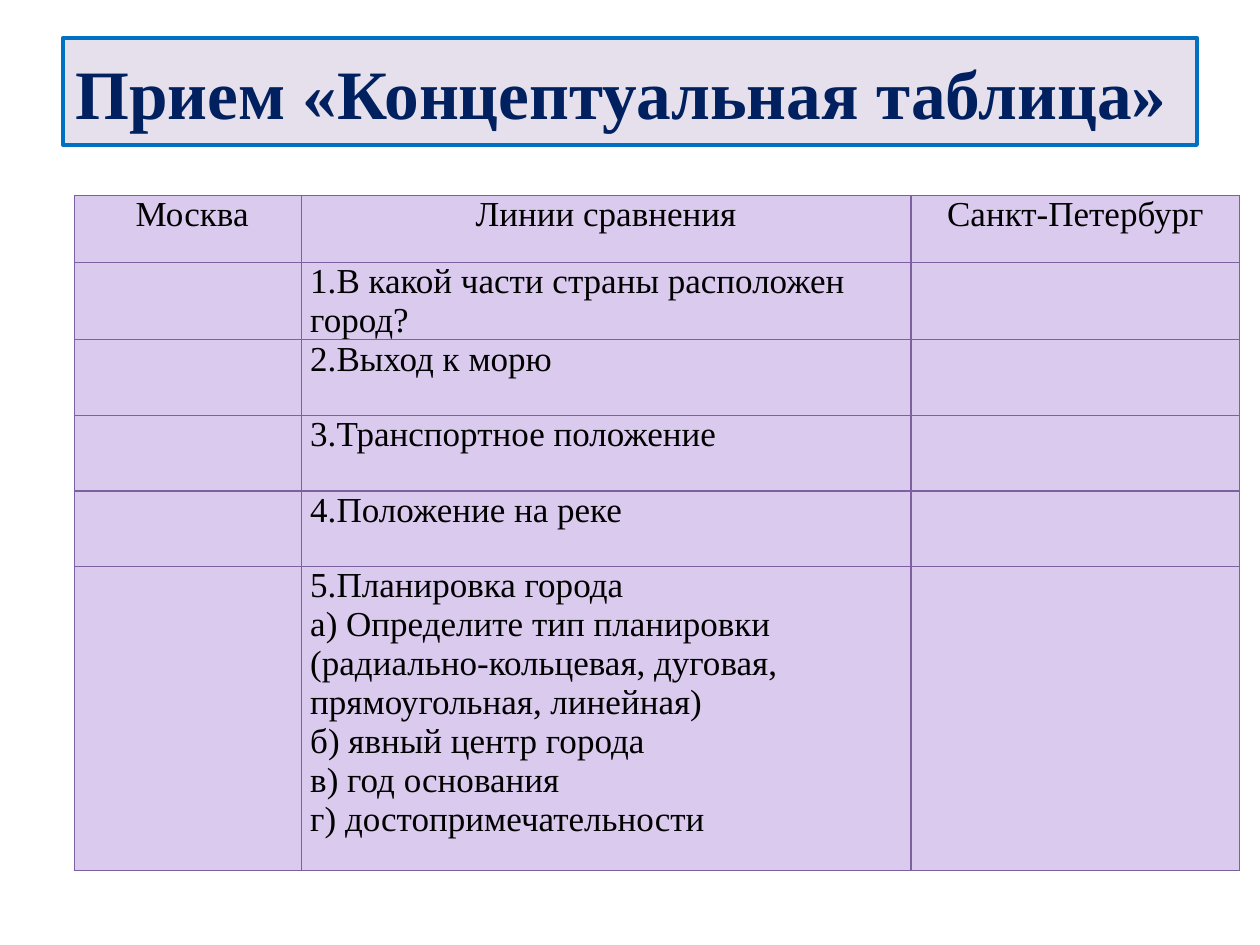
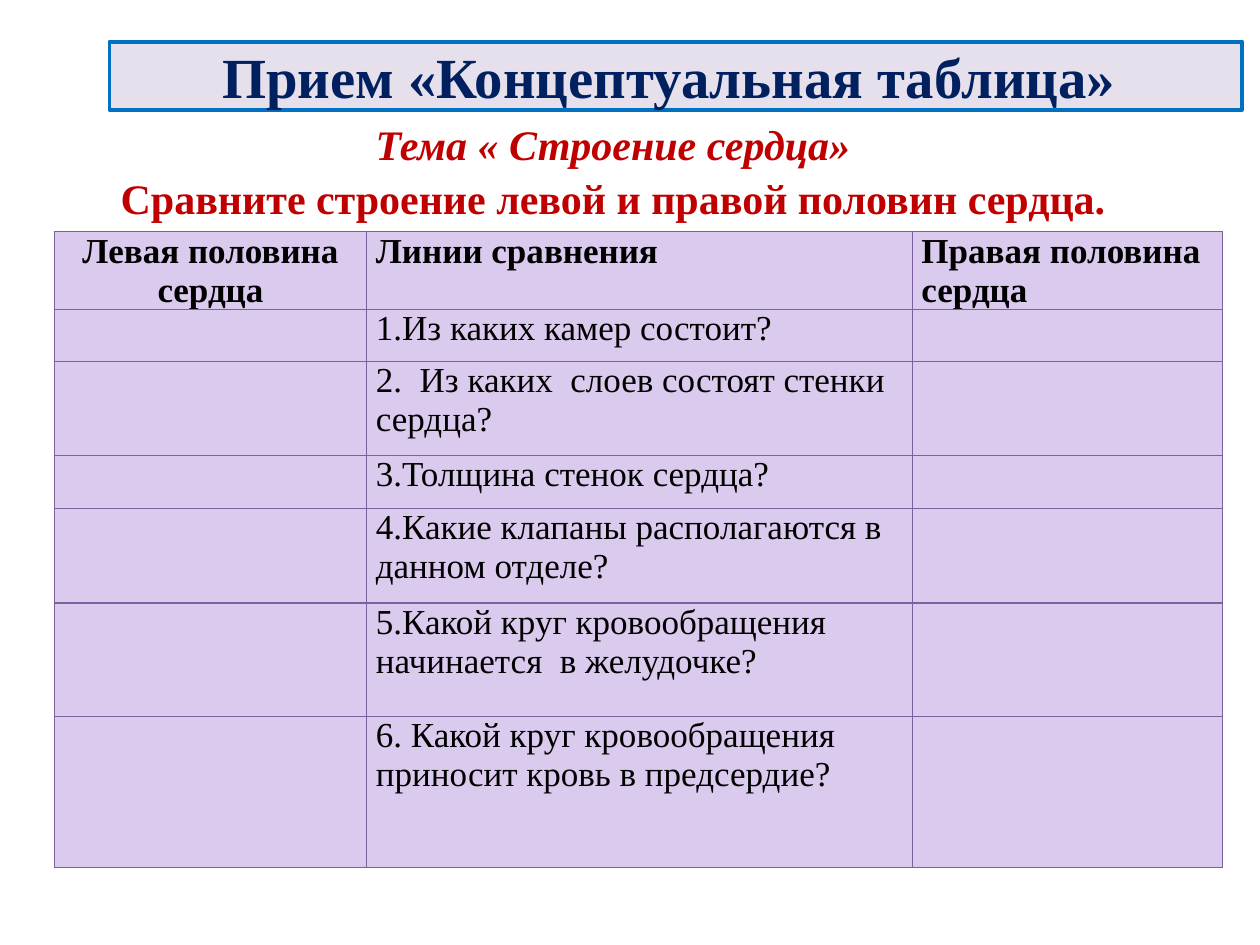
from lxml.etree import SubElement
from pptx import Presentation
from pptx.dml.color import RGBColor
from pptx.enum.shapes import MSO_SHAPE as Shape
from pptx.enum.text import MSO_ANCHOR as Anchor, PP_ALIGN as Align
from pptx.oxml.ns import qn
from pptx.util import Pt

# Content: places and sizes in points
TITLE = "Прием «Концептуальная таблица» "
SLIDES = [
    {
        "title_box": (36, 21.6, 648, 61.2), "title_size": 39.6,
        "table_at": (42.5, 111.6),
        "columns": [129.6, 348.5, 187.9],
        "rows": [38.2, 43.2, 43.2, 43.2, 43.2, 173.5],
        "headings": [" Москва", "Линии сравнения", "Санкт-Петербург"],
        "centred": 3, "bold_headings": False,
        "questions": [
            "1.В какой части страны расположен город?",
            "2.Выход к морю",
            "3.Транспортное положение",
            "4.Положение на реке",
            "5.Планировка города\n"
            "а) Определите тип планировки (радиально-кольцевая, дуговая, "
            "прямоугольная, линейная)\n"
            "б) явный центр города\n"
            "в) год основания\n"
            "г) достопримечательности",
        ],
        "topic": [],
    },
    {
        "title_box": (62.6, 23.8, 647.3, 38.9), "title_size": 32.4,
        "table_at": (31, 132.5),
        "columns": [178.6, 311.8, 177.1],
        "rows": [27.4, 29.5, 54, 30.2, 54, 64.8, 86.4],
        "headings": ["Левая половина сердца", "Линии сравнения",
                     "Правая половина сердца"],
        "centred": 1, "bold_headings": True,
        "questions": [
            "1.Из каких камер состоит?",
            "2.  Из каких  слоев состоят стенки  сердца?",
            "3.Толщина стенок сердца?",
            "4.Какие клапаны располагаются в данном отделе?",
            "5.Какой круг кровообращения  начинается  в желудочке?",
            "6. Какой круг кровообращения приносит кровь в предсердие?",
        ],
        # (line, italic)
        "topic": [("Тема « Строение сердца»", True),
                  ("Сравните строение левой и правой половин сердца.", False)],
    },
]
TOPIC_BOX = (20.2, 62.6, 660.2, 65.5)

# Shared look
FONT = "Times New Roman"
COLORS = {"band": "E6E0EC", "band_line": "0070C0", "title": "002060",
          "cell": "DACAED", "border": "7D60A0", "text": "000000",
          "topic": "C00000"}


def color(name):
    return RGBColor.from_string(COLORS[name])


def points(*values):
    return [Pt(value) for value in values]


def style(paragraph, size, ink, bold=False, italic=False, align=Align.LEFT):
    paragraph.alignment = align
    font = paragraph.font
    font.name, font.size, font.bold, font.italic = FONT, Pt(size), bold, italic
    font.color.rgb = color(ink)


def add_title(slide, box, size):
    band = slide.shapes.add_shape(Shape.RECTANGLE, *points(*box))
    band.shadow.inherit = False
    band.fill.solid()
    band.fill.fore_color.rgb = color("band")
    band.line.color.rgb = color("band_line")
    band.line.width = Pt(2.25)
    frame = band.text_frame
    frame.word_wrap = True
    frame.vertical_anchor = Anchor.MIDDLE
    frame.text = TITLE
    style(frame.paragraphs[0], size, "title", bold=True, align=Align.CENTER)


def add_topic(slide, lines):
    frame = slide.shapes.add_textbox(*points(*TOPIC_BOX)).text_frame
    frame.word_wrap = True
    frame.text = "\n".join(line for line, _ in lines)
    for paragraph, (_, italic) in zip(frame.paragraphs, lines):
        style(paragraph, 24, "topic", True, italic, Align.CENTER)
        paragraph.line_spacing = 1.06


def add_borders(cell):
    properties = cell._tc.get_or_add_tcPr()
    for side in ("lnL", "lnR", "lnT", "lnB"):
        line = SubElement(properties, qn(f"a:{side}"), w=str(Pt(0.75)))
        fill = SubElement(line, qn("a:solidFill"))
        SubElement(fill, qn("a:srgbClr"), val=COLORS["border"])


def fill_cell(cell, text, bold, align):
    cell.margin_left = cell.margin_right = Pt(5.2)
    cell.margin_top = cell.margin_bottom = 0
    add_borders(cell)
    cell.fill.solid()
    cell.fill.fore_color.rgb = color("cell")
    cell.text = text
    for paragraph in cell.text_frame.paragraphs:
        style(paragraph, 20, "text", bold, align=align)


def add_comparison(slide, page):
    columns, rows = page["columns"], page["rows"]
    grid = slide.shapes.add_table(
        len(rows), len(columns),
        *points(*page["table_at"], sum(columns), sum(rows))).table
    for column, width in zip(grid.columns, columns):
        column.width = Pt(width)
    for row, height in zip(grid.rows, rows):
        row.height = Pt(height)
    # The questions stand in the middle, with blank answer cells on both sides
    lines = [page["headings"]] + [["", question, ""]
                                  for question in page["questions"]]
    for r, line in enumerate(lines):
        for c, text in enumerate(line):
            centred = r == 0 and c < page["centred"]
            fill_cell(grid.cell(r, c), text, r == 0 and page["bold_headings"],
                      Align.CENTER if centred else Align.LEFT)


def main():
    deck = Presentation()
    deck.slide_width, deck.slide_height = points(720, 540)
    for page in SLIDES:
        slide = deck.slides.add_slide(deck.slide_layouts[6])
        add_title(slide, page["title_box"], page["title_size"])
        add_comparison(slide, page)
        if page["topic"]:
            add_topic(slide, page["topic"])
    deck.save("out.pptx")


if __name__ == "__main__":
    main()
